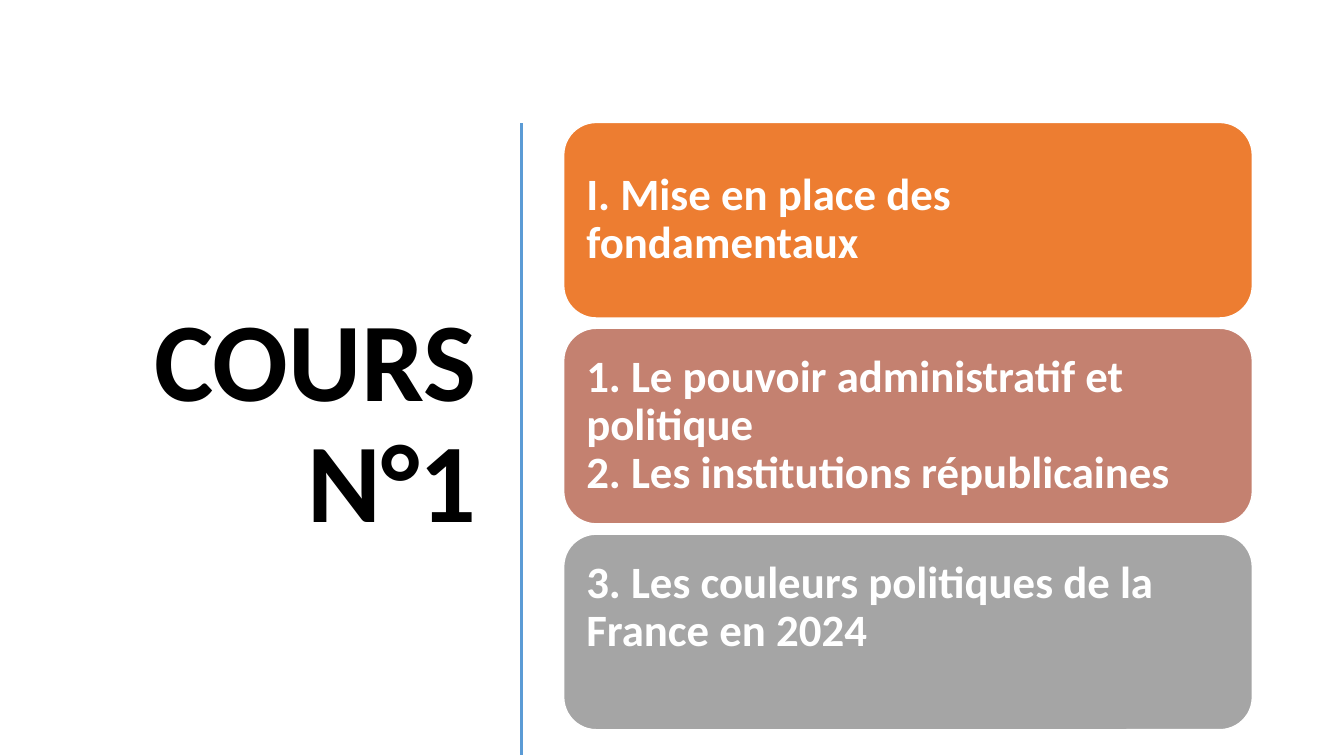
import pptx
import pptx.dml.color
import pptx.enum.shapes
import pptx.enum.text
import pptx.oxml.ns
import pptx.util
import lxml.etree


def colour(hex_string):
    return pptx.dml.color.RGBColor.from_string(hex_string)


class CourseSlide:
    """Hold the style and the slide, with lengths as percentages of its size."""

    font_name = "Calibri"
    line_spacing = 0.9
    card_inset = 0.13

    def __init__(self, presentation):
        self.width = presentation.slide_width
        self.height = presentation.slide_height
        self.slide = presentation.slides.add_slide(presentation.slide_layouts[5])

    def box(self, left, top, width, height):
        return (int(self.width * left / 100), int(self.height * top / 100),
                int(self.width * width / 100), int(self.height * height / 100))

    def set_text(self, text_frame, text, size, text_colour, alignment):
        text_frame.word_wrap = True
        text_frame.auto_size = pptx.enum.text.MSO_AUTO_SIZE.NONE
        text_frame.vertical_anchor = pptx.enum.text.MSO_ANCHOR.MIDDLE
        paragraph = text_frame.paragraphs[0]
        paragraph.text = text
        paragraph.alignment = alignment
        paragraph.line_spacing = self.line_spacing
        paragraph.font.name = self.font_name
        paragraph.font.size = pptx.util.Pt(size)
        paragraph.font.bold = True
        paragraph.font.color.rgb = colour(text_colour)

    def title(self, text, left, top, width, height):
        shape = self.slide.shapes.title
        shape.left, shape.top, shape.width, shape.height = self.box(left, top, width, height)
        self.set_text(shape.text_frame, text, 80, "000000", pptx.enum.text.PP_ALIGN.RIGHT)

    def divider(self, left, top, height, line_colour):
        x, y, _, length = self.box(left, top, 0, height)
        connector = self.slide.shapes.add_connector(
            pptx.enum.shapes.MSO_CONNECTOR.STRAIGHT, x, y, x, y + length)
        connector.line.color.rgb = colour(line_colour)
        connector.line.width = pptx.util.Pt(2)
        lxml.etree.SubElement(connector._element.spPr, pptx.oxml.ns.qn("a:effectLst"))

    def card(self, text, fill, left, top, width, height, space_below=0):
        shape = self.slide.shapes.add_shape(
            pptx.enum.shapes.MSO_SHAPE.ROUNDED_RECTANGLE, *self.box(left, top, width, height))
        shape.shadow.inherit = False
        shape.fill.solid()
        shape.fill.fore_color.rgb = colour(fill)
        shape.line.color.rgb = colour("FFFFFF")
        shape.line.width = pptx.util.Pt(1)
        text_frame = shape.text_frame
        inset = pptx.util.Inches(self.card_inset)
        text_frame.margin_left = text_frame.margin_right = text_frame.margin_top = inset
        text_frame.margin_bottom = inset + pptx.util.Inches(space_below)
        self.set_text(text_frame, text, 32, "FFFFFF", pptx.enum.text.PP_ALIGN.LEFT)


def main():
    presentation = pptx.Presentation()
    presentation.slide_width = pptx.util.Inches(13.33)
    presentation.slide_height = pptx.util.Inches(7.5)
    course = CourseSlide(presentation)
    course.title("COURS N°1", 3.9, 15.6, 32.33, 81.47)
    course.divider(38.8, 16.3, 83.6, "5B9BD5")
    cards = [
        ("I. Mise en place des fondamentaux", "ED7D31", 0),
        ("1. Le pouvoir administratif et politique\v2. Les institutions républicaines",
         "C48170", 0),
        ("3. Les couleurs politiques de la France en 2024", "A5A5A5", 0.48),
    ]
    for row, (text, fill, space_below) in enumerate(cards):
        course.card(text, fill, 41.94, 16.2 + 27.23 * row, 51.24, 25.87, space_below)
    presentation.save("out.pptx")


if __name__ == "__main__":
    main()
